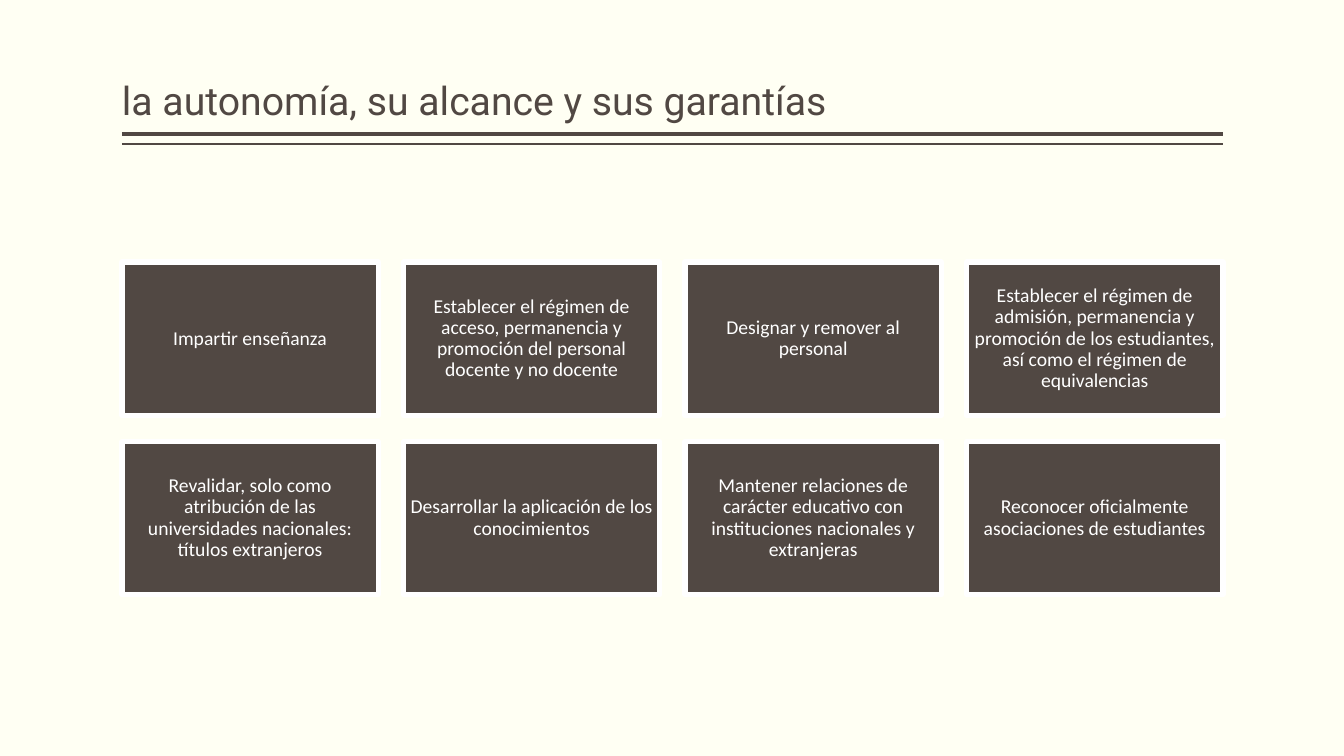
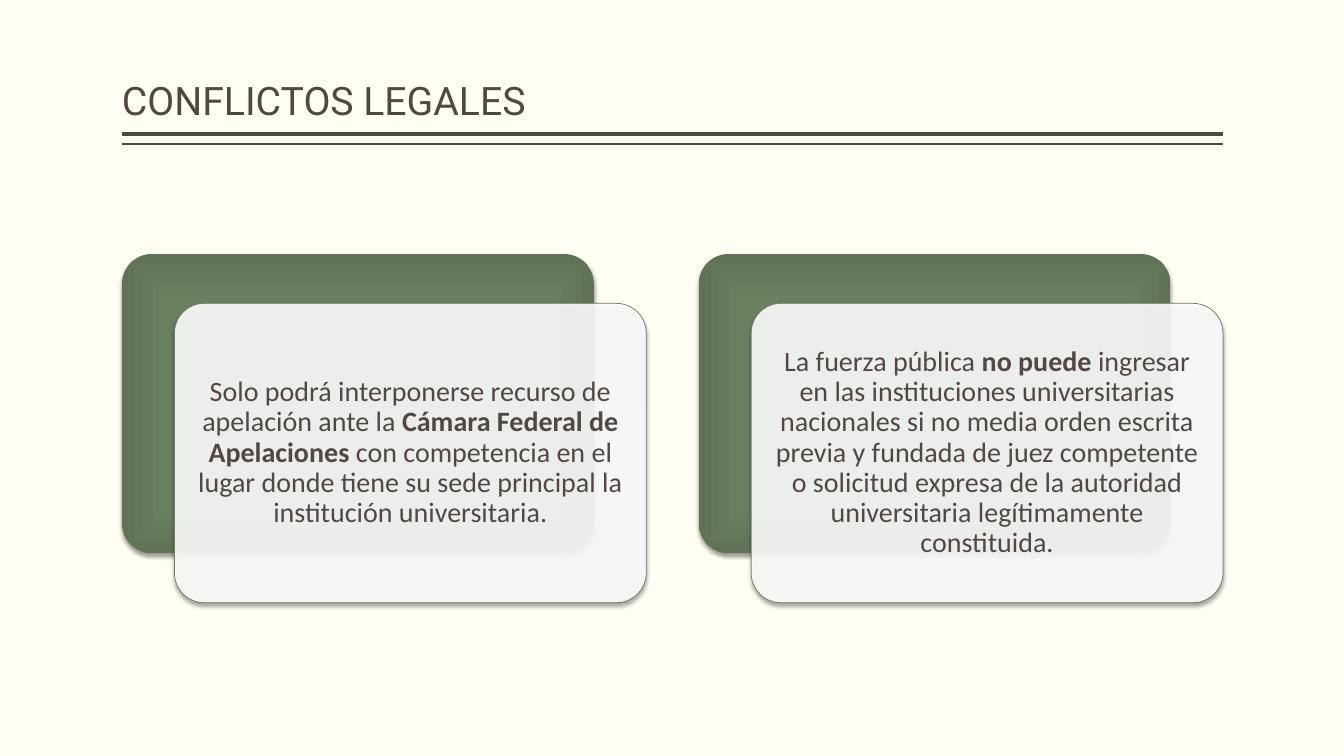
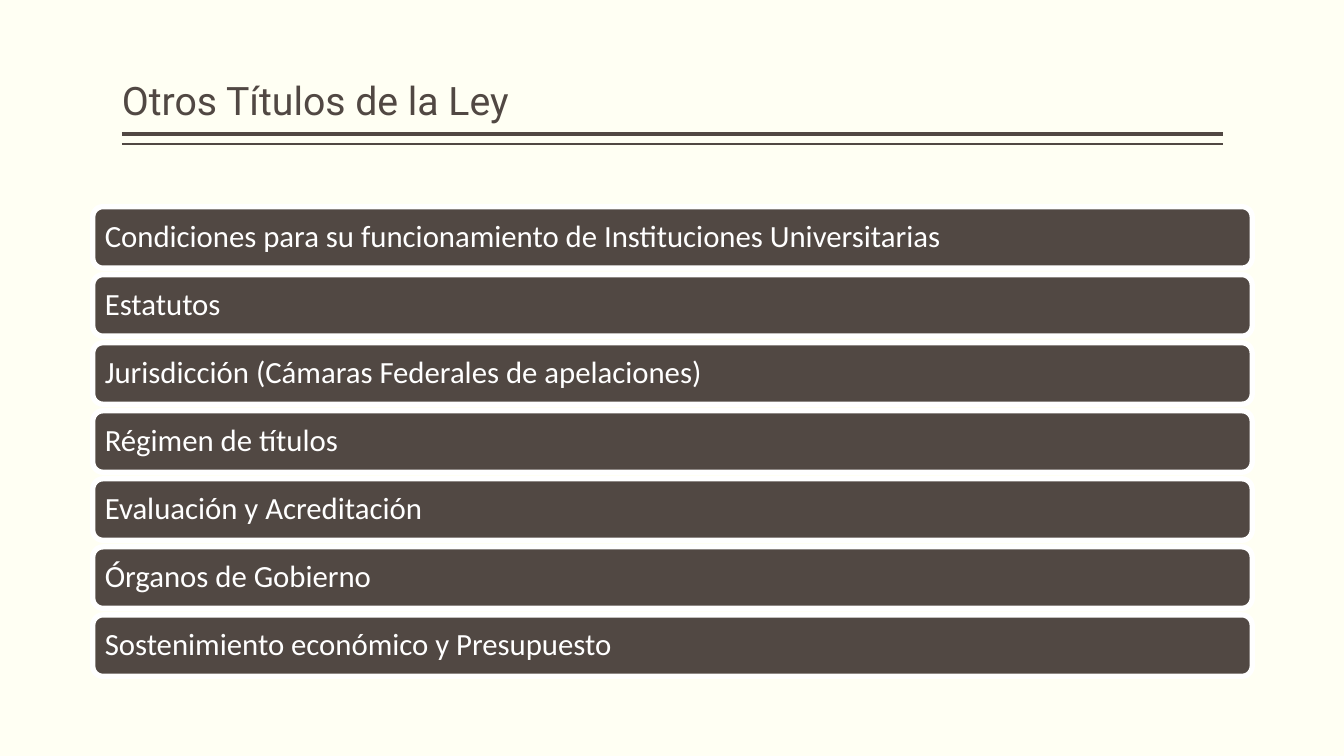
from lxml import etree
from pptx import Presentation
from pptx.dml.color import RGBColor
from pptx.enum.shapes import MSO_CONNECTOR, MSO_SHAPE
from pptx.enum.text import MSO_ANCHOR, MSO_AUTO_SIZE, PP_ALIGN
from pptx.oxml import parse_xml
from pptx.oxml.ns import nsdecls, qn
from pptx.util import Inches, Pt

RECT, ROUND = MSO_SHAPE.RECTANGLE, MSO_SHAPE.ROUNDED_RECTANGLE
STRAIGHT = MSO_CONNECTOR.STRAIGHT
LEFT, CENTER = PP_ALIGN.LEFT, PP_ALIGN.CENTER
MIDDLE, BOTTOM = MSO_ANCHOR.MIDDLE, MSO_ANCHOR.BOTTOM
NO_FIT = MSO_AUTO_SIZE.NONE

COLORS = {
    "paper": "FFFFF3",
    "brown": "514843",
    "white": "FFFFFF",
    "green_light": "6B8162",
    "green_mid": "6A8061",
    "green_dark": "5F7256",
    "green_line": "6D7D66",
    "shadow": "000000",
}
TITLE_FONT, BODY_FONT = "Roboto", "Calibri"
MARGIN, CONTENT_W = 1.21, 10.92

POWERS = [
    "Impartir enseñanza",
    "Establecer el régimen de acceso, permanencia y promoción del personal docente y no docente",
    "Designar y remover al personal",
    "Establecer el régimen de admisión, permanencia y promoción de los estudiantes, "
    "así como el régimen de equivalencias",
    "Revalidar, solo como atribución de las universidades nacionales: títulos extranjeros",
    "Desarrollar la aplicación de los conocimientos",
    "Mantener relaciones de carácter educativo con instituciones nacionales y extranjeras",
    "Reconocer oficialmente asociaciones de estudiantes",
]
# Each card is a list of (text, bold) runs
CONFLICTS = [
    [("Solo podrá interponerse recurso de apelación ante la ", False),
     ("Cámara Federal de Apelaciones ", True),
     ("con competencia en el lugar donde tiene su sede principal la "
      "institución universitaria.", False)],
    [("La fuerza pública ", False),
     ("no puede ", True),
     ("ingresar en las instituciones universitarias nacionales si no media orden escrita "
      "previa y fundada de juez competente o solicitud expresa de la autoridad "
      "universitaria legítimamente constituida.", False)],
]
LAW_TITLES = [
    "Condiciones para su funcionamiento de Instituciones Universitarias",
    "Estatutos",
    "Jurisdicción (Cámaras Federales de apelaciones)",
    "Régimen de títulos",
    "Evaluación y Acreditación",
    "Órganos de Gobierno",
    "Sostenimiento económico y Presupuesto",
]


def rgb(name):
    return RGBColor.from_string(COLORS[name])


def set_text(shape, runs, size, color, font=BODY_FONT, align=CENTER, anchor=MIDDLE,
             inset_x=0.0, inset_y=0.05):
    """Write one paragraph of (text, bold) runs."""
    tf = shape.text_frame
    tf.word_wrap, tf.auto_size, tf.vertical_anchor = True, NO_FIT, anchor
    tf.margin_left = tf.margin_right = Inches(inset_x)
    tf.margin_top = tf.margin_bottom = Inches(inset_y)
    p = tf.paragraphs[0]
    p.alignment, p.line_spacing = align, 0.9
    for text, bold in runs:
        r = p.add_run()
        r.text = text
        r.font.name, r.font.size, r.font.bold = font, Pt(size), bold
        r.font.color.rgb = rgb(color)


def add_box(slide, kind, x, y, w, h, fill, line=None, line_w=0, radius=None):
    sp = slide.shapes.add_shape(kind, Inches(x), Inches(y), Inches(w), Inches(h))
    sp.shadow.inherit = False
    sp.fill.solid()
    sp.fill.fore_color.rgb = rgb(fill)
    if line:
        sp.line.color.rgb = rgb(line)
        sp.line.width = Pt(line_w)
    else:
        sp.line.fill.background()
    if radius is not None:
        sp.adjustments[0] = radius
    return sp


def add_shadow(shape):
    effects = shape.element.spPr.find(qn("a:effectLst"))
    effects.append(parse_xml(
        f'<a:outerShdw {nsdecls("a")} blurRad="{Pt(3.1)}" dist="{Pt(2)}" dir="5400000" '
        f'rotWithShape="0"><a:srgbClr val="{COLORS["shadow"]}"><a:alpha val="38000"/>'
        '</a:srgbClr></a:outerShdw>'))


def set_green_gradient(shape):
    stops = "".join(
        f'<a:gs pos="{pos * 1000}"><a:srgbClr val="{COLORS[name]}"/></a:gs>'
        for pos, name in ((0, "green_light"), (71, "green_mid"), (100, "green_dark")))
    spPr = shape.element.spPr
    spPr.replace(spPr.find(qn("a:solidFill")), parse_xml(
        f'<a:gradFill {nsdecls("a")} rotWithShape="1"><a:gsLst>{stops}</a:gsLst>'
        '<a:path path="rect"><a:fillToRect l="50000" t="50000" r="50000" b="50000"/>'
        '</a:path></a:gradFill>'))


def set_opacity(shape, percent):
    color = shape.element.spPr.find(qn("a:solidFill")).find(qn("a:srgbClr"))
    etree.SubElement(color, qn("a:alpha")).set("val", str(percent * 1000))


def add_titled_slide(prs, title):
    """Title above a thick and a thin rule."""
    s = prs.slides.add_slide(prs.slide_layouts[5])
    ph = s.shapes.title
    ph.left, ph.top = Inches(MARGIN), Inches(0.08)
    ph.width, ph.height = Inches(CONTENT_W), Inches(1.2)
    set_text(ph, [(title, False)], 28, "brown", TITLE_FONT, LEFT, BOTTOM)
    for y, width in ((1.33, 3), (1.43, 1)):
        rule = s.shapes.add_connector(STRAIGHT, Inches(MARGIN), Inches(y),
                                      Inches(MARGIN + CONTENT_W), Inches(y))
        rule.line.color.rgb = rgb("brown")
        rule.line.width = Pt(width)
        etree.SubElement(rule.element.spPr, qn("a:effectLst"))
    return s


def add_power_grid(slide, x, y, w, cols=4, gap=0.25, tile_h=1.52):
    tile_w = (w - gap * (cols - 1)) / cols
    for i, text in enumerate(POWERS):
        row, col = divmod(i, cols)
        tile = add_box(slide, RECT, x + col * (tile_w + gap), y + row * (tile_h + gap + 0.01),
                       tile_w, tile_h, "brown", "white", 3.78)
        set_text(tile, [(text, False)], 14, "white", inset_x=0.06, inset_y=0.06)


def add_conflict_card(slide, x, y, runs, w=4.68, h=2.97):
    """Green panel with a translucent text card offset over it."""
    panel = add_box(slide, ROUND, x, y, w, h, "green_light", radius=0.1)
    set_green_gradient(panel)
    card = add_box(slide, ROUND, x + 0.52, y + 0.49, w, h, "white", "green_line", 0.5, 0.1)
    set_opacity(card, 90)
    for sp in (panel, card):
        add_shadow(sp)
    set_text(card, runs, 20, "brown", inset_x=0.08, inset_y=0.08)


def add_bar_list(slide, x, y, w, pitch=0.675, bar_h=0.61):
    for i, text in enumerate(LAW_TITLES):
        bar = add_box(slide, ROUND, x, y + i * pitch, w, bar_h, "brown", "white", 3.78)
        set_text(bar, [(text, False)], 22, "white", align=LEFT, inset_x=0.09, inset_y=0.09)


def main():
    prs = Presentation()
    prs.slide_width, prs.slide_height = Inches(13.33), Inches(7.5)
    background = prs.slide_master.background.fill
    background.solid()
    background.fore_color.rgb = rgb("paper")

    # Powers of the universities
    s = add_titled_slide(prs, "la autonomía, su alcance y sus garantías")
    add_power_grid(s, MARGIN, 2.6, CONTENT_W)

    # Legal conflicts
    s = add_titled_slide(prs, "CONFLICTOS LEGALES")
    for i, runs in enumerate(CONFLICTS):
        add_conflict_card(s, MARGIN + i * 5.72, 2.52, runs)

    # Remaining titles of the law
    s = add_titled_slide(prs, "Otros Títulos de la Ley")
    add_bar_list(s, 0.92, 2.05, 11.5)

    prs.save("out.pptx")


if __name__ == "__main__":
    main()
